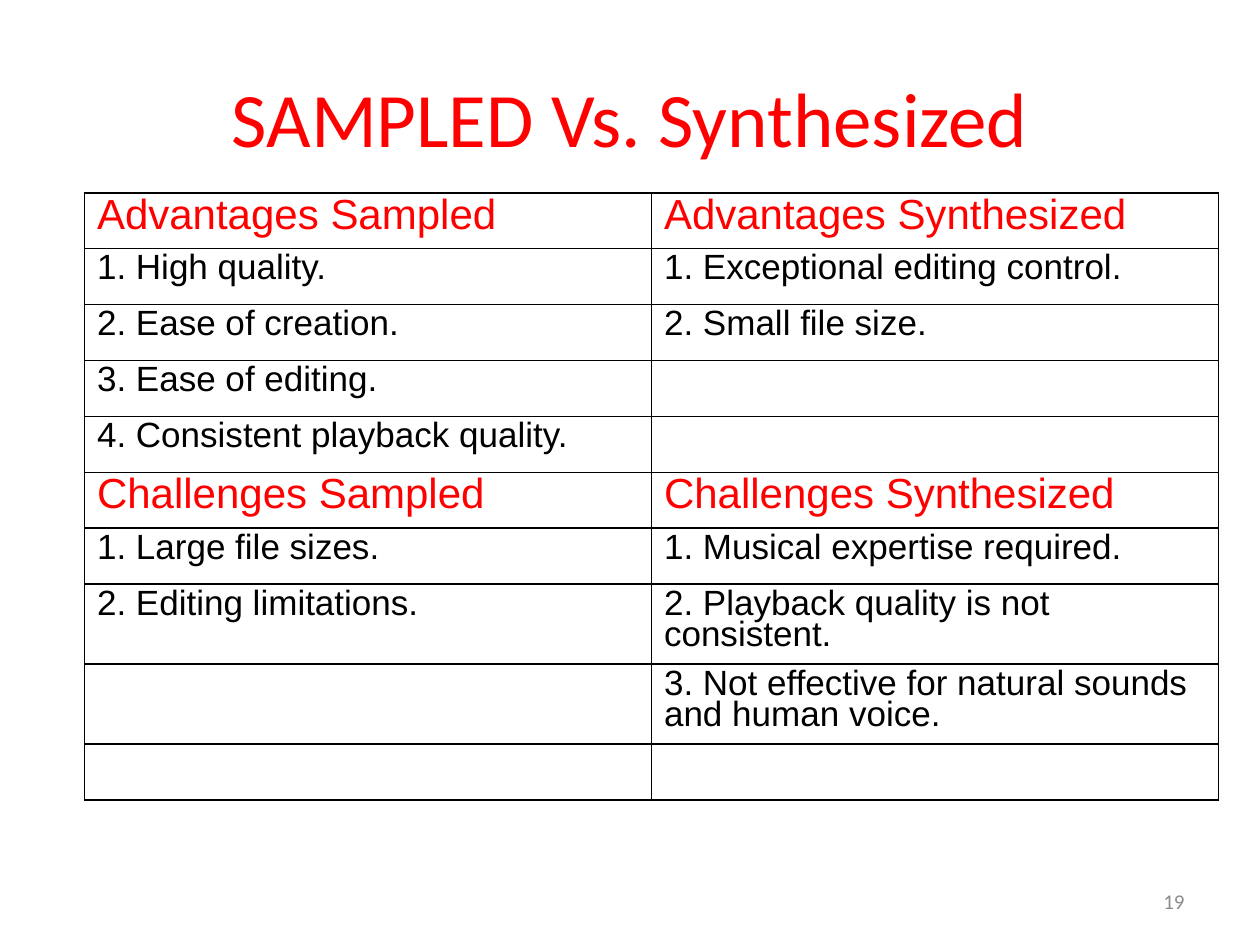
from dataclasses import dataclass

from lxml import etree
from pptx import Presentation
from pptx import util as u
from pptx.dml import color
from pptx.enum import text
from pptx.oxml import ns

WIDTH, HEIGHT = 10, 7.5
COLORS = {"heading": "FF0000", "body": "000000", "number": "8C8C8C",
          "paper": "FFFFFF", "border": "000000"}
ROW_HEIGHT = 0.444
COLUMN_WIDTH = 0.45 * WIDTH


@dataclass
class Style:
    font: str
    size: int
    ink: str
    align: text.PP_ALIGN = text.PP_ALIGN.LEFT


@dataclass
class Label:
    words: str
    left: float  # shares of the slide's size
    top: float
    width: float
    height: float
    style: Style


@dataclass
class Section:
    headings: tuple[str, str]
    points: list[tuple[str, str]]


HEADING = Style("Arial", 24, "heading")
BODY = Style("Arial", 20, "body")

LABELS = [
    Label("SAMPLED Vs. Synthesized", 0.05, 0.04, 0.9, 0.167,
          Style("Calibri", 44, "heading", text.PP_ALIGN.CENTER)),
    Label("19", 0.717, 0.927, 0.233, 0.053,
          Style("Calibri", 12, "number", text.PP_ALIGN.RIGHT)),
]

SECTIONS = [
    Section(("Advantages Sampled", "Advantages Synthesized"), [
        ("1. High quality.", "1. Exceptional editing control."),
        ("2. Ease of creation.", "2. Small file size."),
        ("3. Ease of editing.", ""),
        ("4. Consistent playback quality.", ""),
    ]),
    Section(("Challenges Sampled", "Challenges Synthesized"), [
        ("1. Large file sizes.", "1. Musical expertise required."),
        ("2. Editing limitations.", "2. Playback quality is not consistent."),
        ("", "3. Not effective for natural sounds and human voice."),
        ("", ""),
    ]),
]


def rgb(name: str) -> color.RGBColor:
    return color.RGBColor.from_string(COLORS[name])


def write(para, words: str, style: Style) -> None:
    para.text = words
    para.alignment = style.align
    for span in para.runs:
        span.font.name = style.font
        span.font.size = u.Pt(style.size)
        span.font.color.rgb = rgb(style.ink)


def draw_label(page, label: Label) -> None:
    box = page.shapes.add_textbox(
        u.Inches(label.left * WIDTH), u.Inches(label.top * HEIGHT),
        u.Inches(label.width * WIDTH), u.Inches(label.height * HEIGHT))
    box.text_frame.word_wrap = True
    box.text_frame.vertical_anchor = text.MSO_ANCHOR.MIDDLE
    write(box.text_frame.paragraphs[0], label.words, label.style)


def add_borders(cell) -> None:
    properties = cell._tc.get_or_add_tcPr()
    for index, side in enumerate(("lnL", "lnR", "lnT", "lnB")):
        line = etree.Element(ns.qn(f"a:{side}"), w=str(u.Pt(1)))
        fill = etree.SubElement(line, ns.qn("a:solidFill"))
        etree.SubElement(fill, ns.qn("a:srgbClr"), val=COLORS["border"])
        properties.insert(index, line)


def draw_cell(cell, words: str, style: Style) -> None:
    cell.fill.solid()
    cell.fill.fore_color.rgb = rgb("paper")
    add_borders(cell)
    para = cell.text_frame.paragraphs[0]
    write(para, words, style)
    para.line_spacing = 0.8


def draw_table(page, sections: list[Section]) -> None:
    rows = []
    for section in sections:
        rows.append((section.headings, HEADING))
        rows += [(pair, BODY) for pair in section.points]
    table = page.shapes.add_table(
        len(rows), 2, u.Inches(0.67), u.Inches(1.53),
        u.Inches(2 * COLUMN_WIDTH), u.Inches(len(rows) * ROW_HEIGHT)).table
    table.first_row = table.horz_banding = False
    for row, (pair, style) in enumerate(rows):
        for column, words in enumerate(pair):
            draw_cell(table.cell(row, column), words, style)


def main() -> None:
    deck = Presentation()
    deck.slide_width, deck.slide_height = u.Inches(WIDTH), u.Inches(HEIGHT)
    page = deck.slides.add_slide(deck.slide_layouts[6])
    # Title and page number
    for label in LABELS:
        draw_label(page, label)
    # Comparison table
    draw_table(page, SECTIONS)
    deck.save("out.pptx")


if __name__ == "__main__":
    main()
